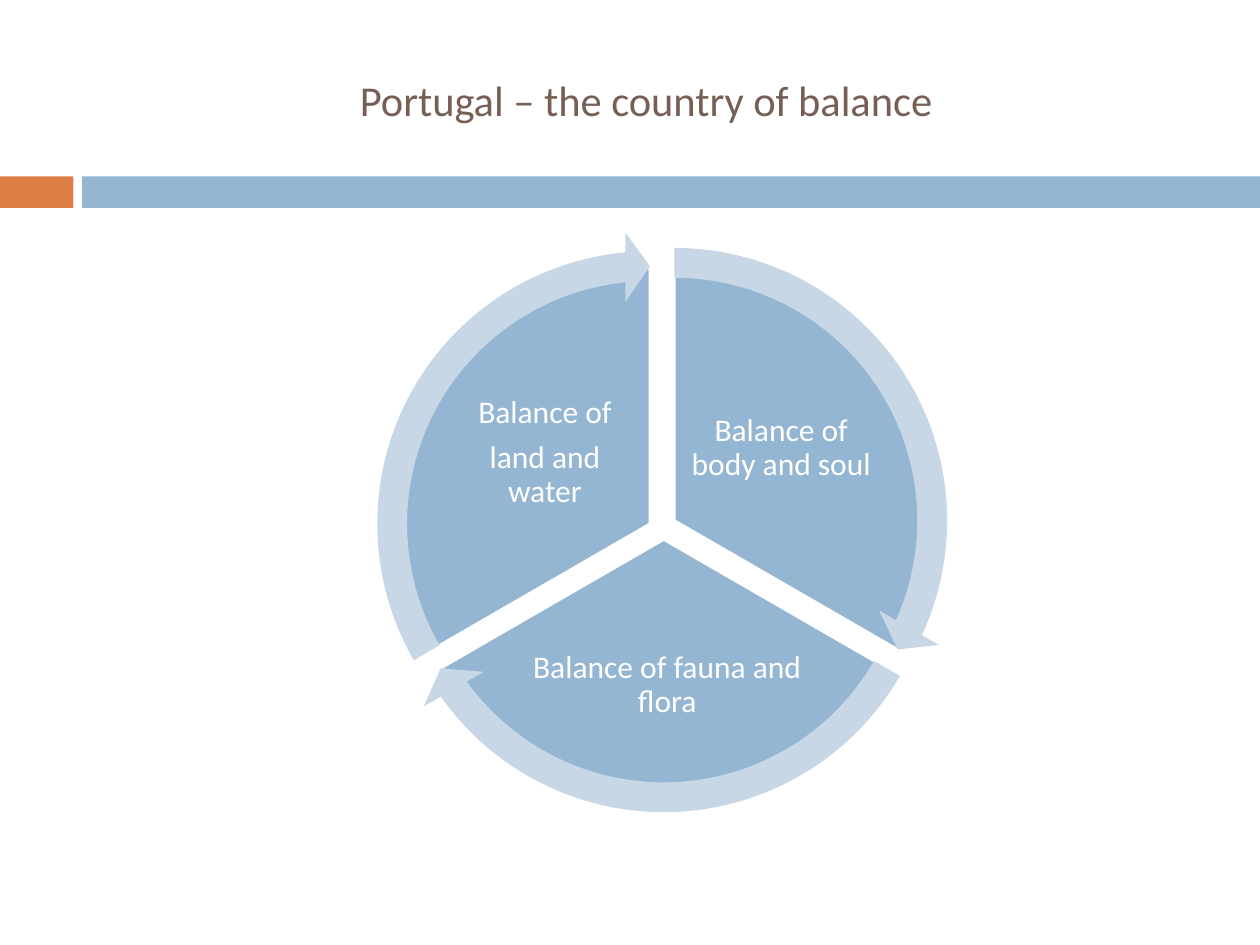
from pptx import Presentation
from pptx import util as u
from pptx.dml import color
from pptx.enum import shapes, text

Pt = u.Pt
COLORS = {"orange": "DD8047", "blue": "94B6D2", "pale": "C8D7E5",
          "brown": "775F55", "white": "FFFFFF"}
FONT = "Calibri"
HEAD_SWEEP = 3.275
ARROW_SIZE = 334

# centre, diameter, start and end angle, label box from centre, lines
SLICES = [
    ((181.4, 167.5), 297.4, 162, 18, (7.7, -85.8, 106.6, 88.6),
     ["Balance of body and soul"]),
    ((175.3, 178.3), 297.4, 18, 90, (-77.6, 44.5, 159.1, 77.8),
     ["Balance of fauna and flora"]),
    ((167.4, 169.4), 292.3, 90, 162, (-112.2, -84.1, 104.4, 87.1),
     ["Balance of", "land and water"]),
]


def rgb(name):
    """Return the named colour."""
    return color.RGBColor.from_string(COLORS[name])


def add_shape(s, kind, box, fill, adj=(), line=None):
    """Add a flat preset shape in a box given in points."""
    sp = s.shapes.add_shape(kind, *map(Pt, box))
    sp.shadow.inherit = False
    sp.fill.solid()
    sp.fill.fore_color.rgb = rgb(fill)
    for i, value in enumerate(adj):
        sp.adjustments[i] = value
    if line:
        sp.line.color.rgb = rgb(line)
        sp.line.width = Pt(1.5)
    else:
        sp.line.fill.background()
    return sp


def format_paragraph(p, size, fill):
    """Centre a paragraph and set its font."""
    p.alignment = text.PP_ALIGN.CENTER
    p.font.name = FONT
    p.font.size = Pt(size)
    p.font.color.rgb = rgb(fill)


def add_title(s, box, words):
    """Place the title placeholder in the box."""
    sp = s.shapes.title
    sp.left, sp.top, sp.width, sp.height = map(Pt, box)
    tf = sp.text_frame
    tf.text = words
    tf.vertical_anchor = text.MSO_ANCHOR.MIDDLE
    format_paragraph(tf.paragraphs[0], 24.3, "brown")


def add_band(s, box, tab=42, gap=5):
    """Split the box into a short orange tab and a long blue bar."""
    x, y, w, h = box
    kind = shapes.MSO_SHAPE.RECTANGLE
    add_shape(s, kind, (x, y, tab, h), "orange")
    add_shape(s, kind, (x + tab + gap, y, w - tab - gap, h), "blue")


def add_label(s, box, lines):
    """Add centred white text in the box."""
    tf = s.shapes.add_textbox(*map(Pt, box)).text_frame
    tf.word_wrap = True
    tf.vertical_anchor = text.MSO_ANCHOR.MIDDLE
    tf.margin_left = tf.margin_right = tf.margin_top = tf.margin_bottom = Pt(2)
    for i, words in enumerate(lines):
        p = tf.add_paragraph() if i else tf.paragraphs[0]
        p.text = words
        p.line_spacing = 0.9
        p.space_after = Pt(6.3)
        format_paragraph(p, 18, "white")


def add_wheel(s, box):
    """Draw the three slices and their arrows relative to the box."""
    x, y = box[:2]

    def square(centre, size):
        """Return the square of this size around a centre."""
        return (x + centre[0] - size / 2, y + centre[1] - size / 2, size, size)

    for centre, size, start, end, (dx, dy, w, h), lines in SLICES:
        add_shape(s, shapes.MSO_SHAPE.PIE, square(centre, size), "blue",
                  (start, end), "white")
        add_label(s, (x + centre[0] + dx, y + centre[1] + dy, w, h), lines)
    for centre, _, start, end, *_ in SLICES:
        add_shape(s, shapes.MSO_SHAPE.CIRCULAR_ARROW, square(centre, ARROW_SIZE),
                  "pale", (0.051, HEAD_SWEEP, end - HEAD_SWEEP, start, 0.059))


def main():
    """Build and save the slide."""
    prs = Presentation()
    prs.slide_width, prs.slide_height = Pt(720), Pt(540)
    s = prs.slides.add_slide(prs.slide_layouts[5])
    add_band(s, (0, 100.8, 720, 18))
    add_title(s, (48, 18, 642.5, 78), "Portugal – the country of balance")
    add_wheel(s, (204, 130, 348, 345))
    prs.save("out.pptx")


if __name__ == "__main__":
    main()
